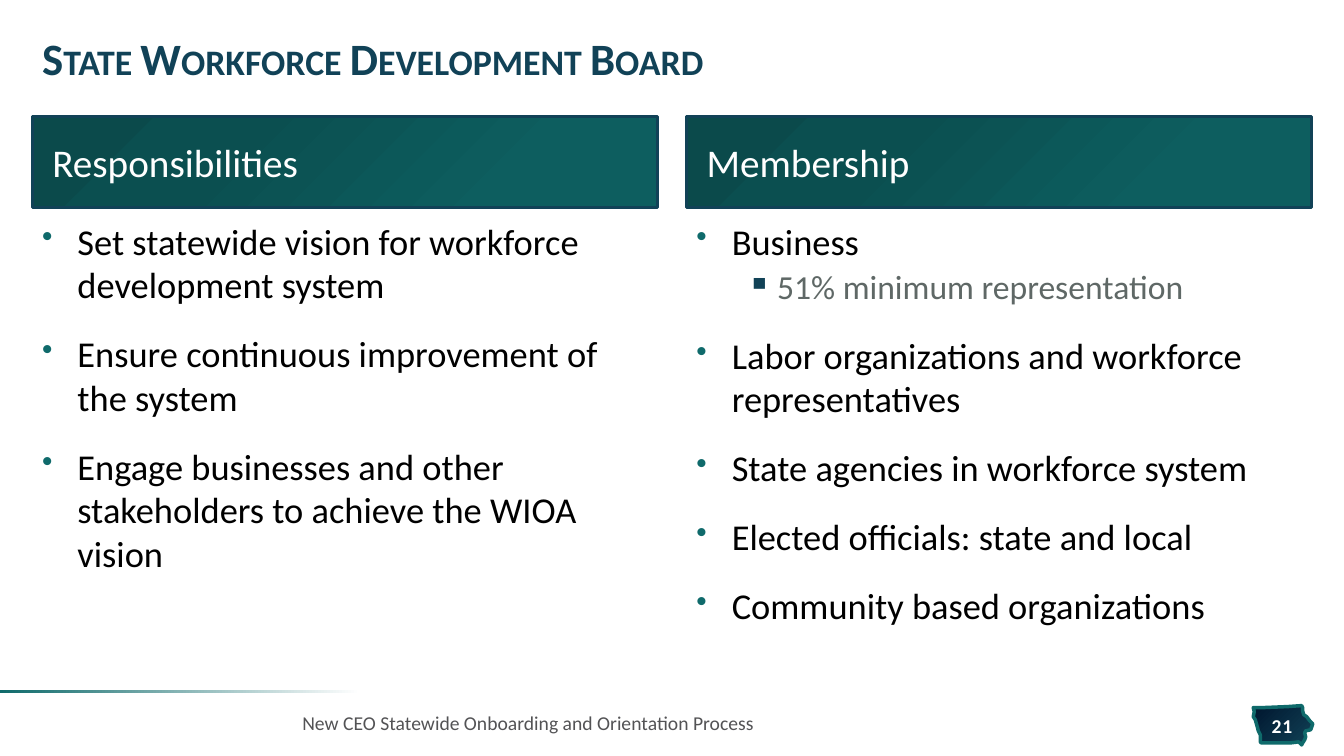
from lxml import etree
from pptx import Presentation
from pptx.dml.color import RGBColor
from pptx.enum.shapes import MSO_SHAPE
from pptx.enum.text import MSO_ANCHOR, PP_ALIGN
from pptx.oxml import parse_xml
from pptx.oxml.ns import nsdecls, qn
from pptx.util import Inches, Pt

FONT = "Calibri"
NAVY, TEAL, WHITE, BLACK = "114257", "0F6A6B", "FFFFFF", "000000"
SUBTLE, FOOTER_GRAY = "5F6866", "535355"

TITLE = "State Workforce Development Board"
FOOTER = "New CEO Statewide Onboarding and Orientation Process"
PAGE_NUMBER = "21"

# Each column: heading, then (level, text) items
COLUMNS = [
    ("Responsibilities", [
        (0, "Set statewide vision for workforce development system"),
        (0, "Ensure continuous improvement of the system"),
        (0, "Engage businesses and other stakeholders to achieve the WIOA vision"),
    ]),
    ("Membership", [
        (0, "Business"),
        (1, "51% minimum representation"),
        (0, "Labor organizations and workforce representatives"),
        (0, "State agencies in workforce system"),
        (0, "Elected officials: state and local"),
        (0, "Community based organizations"),
    ]),
]
LEVELS = [
    dict(size=26, color=BLACK, left=0.35, hanging=0.35, before=18, spacing=1,
         bullet="•", bullet_color=TEAL, bullet_size=85),
    dict(size=24, color=SUBTLE, left=0.8, hanging=0.3, before=5, spacing=0.95,
         bullet="▪", bullet_color=NAVY, bullet_size=100),
]
COLUMN_LEFT, COLUMN_WIDTH, COLUMN_STEP = 0.32, 6.2, 6.49

HEADING_STOPS = [(0, "0D5E5F"), (23, "0D5E5F"), (69, "0B4F50"), (97, "0B4A4B")]
CORNER_GLOW = ('<a:path path="circle"><a:fillToRect l="100000" t="100000"/></a:path>')
BAR_STOPS = [(6, WHITE), (100, TEAL)]
BADGE_STOPS = [(0, "00162E"), (100, NAVY)]

# State outline, in hundredths of an inch
STATE_OUTLINE = [
    (1291, 700), (1277, 701), (1253, 702), (1243, 702), (1244, 706), (1243, 711),
    (1245, 714), (1247, 721), (1248, 725), (1250, 729), (1250, 736), (1251, 737),
    (1280, 737), (1288, 736), (1291, 739), (1292, 737), (1294, 734), (1295, 731),
    (1294, 727), (1295, 725), (1300, 724), (1302, 718), (1299, 715), (1296, 711),
    (1293, 709), (1292, 705), (1292, 702),
]


def rgb(color):
    return RGBColor.from_string(color)


def linear(degrees):
    return f'<a:lin ang="{degrees * 60000}" scaled="0"/>'


def set_gradient(shape, stops, direction):
    """Fill with (percent, colour) stops; direction is the XML after the stop list."""
    stop_list = "".join(
        f'<a:gs pos="{percent * 1000}"><a:srgbClr val="{color}"/></a:gs>'
        for percent, color in stops)
    gradient = parse_xml(f'<a:gradFill {nsdecls("a")} rotWithShape="1">'
                         f'<a:gsLst>{stop_list}</a:gsLst>{direction}</a:gradFill>')
    shape.fill.background()
    properties = shape._element.spPr
    properties.replace(properties.find(qn("a:noFill")), gradient)
    shape.shadow.inherit = False


def set_outline(shape, color, width):
    shape.line.color.rgb = rgb(color)
    shape.line.width = Pt(width)


def add_rectangle(slide, left, top, width, height):
    return slide.shapes.add_shape(MSO_SHAPE.RECTANGLE, Inches(left), Inches(top),
                                  Inches(width), Inches(height))


def set_frame(shape, anchor=MSO_ANCHOR.MIDDLE, side=0.1, end=0.05):
    frame = shape.text_frame
    frame.word_wrap = True
    frame.vertical_anchor = anchor
    frame.margin_left = frame.margin_right = Inches(side)
    frame.margin_top = frame.margin_bottom = Inches(end)
    return frame


def add_text_box(slide, left, top, width, height, **frame_options):
    box = slide.shapes.add_textbox(Inches(left), Inches(top), Inches(width), Inches(height))
    return set_frame(box, **frame_options)


def add_run(paragraph, text, size, color, bold=False):
    run = paragraph.add_run()
    run.text = text
    run.font.name = FONT
    run.font.size = Pt(size)
    run.font.bold = bold
    run.font.color.rgb = rgb(color)
    return run


def set_bullet(paragraph, level):
    properties = paragraph._p.get_or_add_pPr()
    properties.set("marL", str(Inches(level["left"])))
    properties.set("indent", str(-Inches(level["hanging"])))
    color = etree.SubElement(properties, qn("a:buClr"))
    etree.SubElement(color, qn("a:srgbClr"), val=level["bullet_color"])
    etree.SubElement(properties, qn("a:buSzPct"), val=str(level["bullet_size"] * 1000))
    etree.SubElement(properties, qn("a:buChar"), char=level["bullet"])


def add_column(slide, left, heading, items):
    banner = add_rectangle(slide, left, 1.16, COLUMN_WIDTH, 0.9)
    set_gradient(banner, HEADING_STOPS, CORNER_GLOW)
    set_outline(banner, NAVY, 2)
    paragraph = set_frame(banner, side=0.2, end=0).paragraphs[0]
    paragraph.alignment = PP_ALIGN.LEFT
    add_run(paragraph, heading, 28, WHITE)

    frame = add_text_box(slide, left, 2.12, COLUMN_WIDTH, 4.65, anchor=MSO_ANCHOR.TOP)
    for index, (depth, text) in enumerate(items):
        level = LEVELS[depth]
        paragraph = frame.add_paragraph() if index else frame.paragraphs[0]
        paragraph.level = depth
        set_bullet(paragraph, level)
        paragraph.line_spacing = level["spacing"]
        paragraph.space_before = Pt(level["before"] if index else 0)
        add_run(paragraph, text, level["size"], level["color"])


def add_state_badge(slide):
    start, *rest = STATE_OUTLINE
    builder = slide.shapes.build_freeform(*start, scale=Inches(0.01))
    builder.add_line_segments(rest, close=True)
    badge = builder.convert_to_shape()
    set_gradient(badge, BADGE_STOPS, linear(45))
    set_outline(badge, TEAL, 2.5)


def main():
    presentation = Presentation()
    presentation.slide_width, presentation.slide_height = Inches(13.33), Inches(7.5)
    slide = presentation.slides.add_slide(presentation.slide_layouts[6])

    add_state_badge(slide)
    bar = add_rectangle(slide, 0, 6.85, 3.8, 0.03)
    set_gradient(bar, BAR_STOPS, linear(180))
    bar.line.fill.background()

    title = add_text_box(slide, 0.32, 0.24, 12.69, 0.75).paragraphs[0]
    title.line_spacing = 0.85
    title_run = add_run(title, TITLE, 32, NAVY, bold=True)
    title_run.font._element.set("cap", "small")

    for index, (heading, items) in enumerate(COLUMNS):
        add_column(slide, COLUMN_LEFT + index * COLUMN_STEP, heading, items)

    footer = add_text_box(slide, 2.9, 6.97, 9.06, 0.4).paragraphs[0]
    add_run(footer, FOOTER, 14, FOOTER_GRAY)
    number = add_text_box(slide, 12.46, 7.08, 0.51, 0.23, side=0).paragraphs[0]
    number.alignment = PP_ALIGN.CENTER
    number_run = add_run(number, PAGE_NUMBER, 14, WHITE, bold=True)
    number_run.font._element.set("spc", "50")

    presentation.save("out.pptx")


if __name__ == "__main__":
    main()
